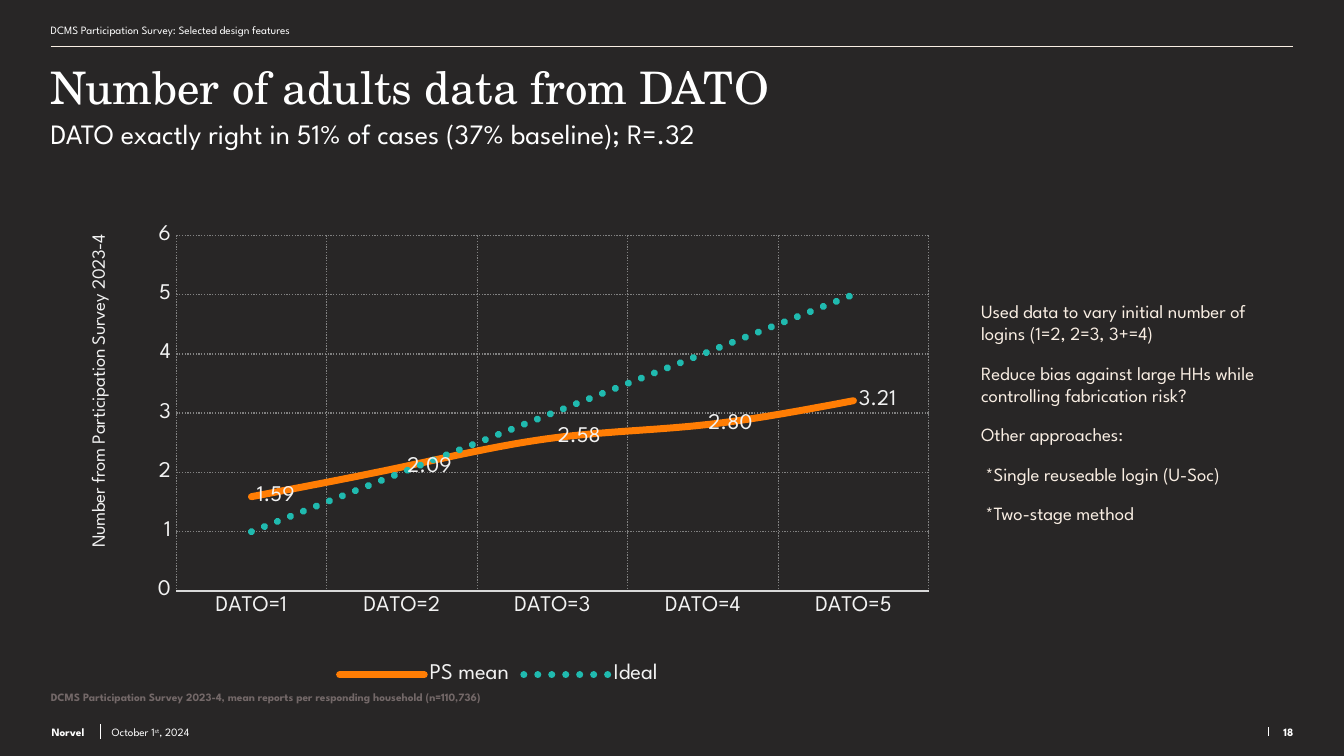
from lxml.etree import SubElement
from pptx import Presentation
from pptx.chart.data import CategoryChartData
from pptx.dml.color import RGBColor
from pptx.enum.chart import (XL_CHART_TYPE, XL_LABEL_POSITION,
                             XL_LEGEND_POSITION, XL_TICK_MARK)
from pptx.enum.dml import MSO_LINE
from pptx.enum.shapes import MSO_CONNECTOR
from pptx.enum.text import MSO_ANCHOR, PP_ALIGN
from pptx.oxml.ns import qn
from pptx.util import Pt

SANS, SERIF = "League Spartan", "TeX Gyre Schola"
WHITE, CREAM, PALE, GREY = "FFFFFF", "F9EEE3", "F2F2F2", "736868"
LEFT, RIGHT = 27.2, 692.8
NOTES = (
    "Used data to vary initial number of logins (1=2, 2=3, 3+=4)",
    "Reduce bias against large HHs while controlling fabrication risk?",
    "Other approaches:",
    " *Single reuseable login (U-Soc)",
    " *Two-stage method",
)
SERIES = (
    ("PS mean", (1.59, 2.09, 2.58, 2.80, 3.21), "FF7D04", MSO_LINE.SOLID),
    ("Ideal", (1, 2, 3, 4, 5), "20BAAF", MSO_LINE.ROUND_DOT),
)


def color(code):
    """Turn a hex string into a colour."""
    return RGBColor.from_string(code)


def assign(item, **values):
    """Set each named value on an item."""
    for name, value in values.items():
        setattr(item, name, value)


def style(font, size, code=WHITE, face=SANS, bold=False):
    """Give a font its size, face, weight and colour."""
    assign(font, size=Pt(size), name=face, bold=bold)
    font.color.rgb = color(code)


def stroke(line, code, width, dash=MSO_LINE.SOLID):
    """Give a line its colour, width and dash."""
    line.color.rgb = color(code)
    assign(line, width=Pt(width), dash_style=dash)


def rule(slide, x1, y1, x2, y2, code=WHITE):
    """Draw a thin straight line without a shadow."""
    line = slide.shapes.add_connector(
        MSO_CONNECTOR.STRAIGHT, Pt(x1), Pt(y1), Pt(x2), Pt(y2))
    stroke(line.line, code, 0.5)
    SubElement(line._element.spPr, qn("a:effectLst"))


def text(slide, box, paras, look, anchor=MSO_ANCHOR.TOP,
         align=PP_ALIGN.LEFT, after=0):
    """Add a text box; carets enclose superscript words."""
    frame = slide.shapes.add_textbox(*map(Pt, box)).text_frame
    assign(frame, word_wrap=True, vertical_anchor=anchor, margin_left=0,
           margin_right=0, margin_top=0, margin_bottom=0)
    for i, words in enumerate(paras):
        para = frame.add_paragraph() if i else frame.paragraphs[0]
        assign(para, alignment=align, space_after=Pt(after))
        for j, part in enumerate(words.split("^")):
            run = para.add_run()
            run.text = part
            style(run.font, **look)
            if j % 2:
                run._r.get_or_add_rPr().set("baseline", "30000")


def place(layout, **values):
    """Fill a chart layout element with manual values."""
    manual = SubElement(layout, qn("c:manualLayout"))
    for name, value in values.items():
        SubElement(manual, qn(f"c:{name}")).set("val", str(value))


def axes(chart):
    """Style both axes, their grids and the value title."""
    for axis in (chart.category_axis, chart.value_axis):
        assign(axis, major_tick_mark=XL_TICK_MARK.NONE,
               minor_tick_mark=XL_TICK_MARK.NONE, has_major_gridlines=True)
        style(axis.tick_labels.font, 12, PALE)
        stroke(axis.major_gridlines.format.line, "808080", 0.75,
               MSO_LINE.ROUND_DOT)
    stroke(chart.category_axis.format.line, "D9D9D9", 0.75)
    value = chart.value_axis
    assign(value, minimum_scale=0, maximum_scale=6, major_unit=1)
    assign(value.tick_labels, number_format="0",
           number_format_is_linked=False)
    value.format.line.fill.background()
    title = value.axis_title
    title.text_frame.text = "Number from Participation Survey 2023-4"
    style(title.text_frame.paragraphs[0].runs[0].font, 10, PALE)
    layout = title._element.get_or_add_layout() if hasattr(
        title._element, "get_or_add_layout") else title._element.find(
        qn("c:layout"))
    place(layout, xMode="edge", yMode="edge", x=0.04, y=0.03)


def graph(slide):
    """Add the line chart of survey means against the ideal."""
    data = CategoryChartData(number_format="0.00")
    data.categories = [f"DATO={n}" for n in range(1, 6)]
    for name, values, *_ in SERIES:
        data.add_series(name, values)
    chart = slide.shapes.add_chart(
        XL_CHART_TYPE.LINE, Pt(LEFT), Pt(116), Pt(480), Pt(254),
        data).chart
    assign(chart, has_title=False, has_legend=True)
    style(chart.font, 10, PALE)
    axes(chart)
    assign(chart.legend, position=XL_LEGEND_POSITION.BOTTOM,
           include_in_layout=False)
    style(chart.legend.font, 12, PALE)
    plot = chart.plots[0]
    plot.vary_by_categories = False
    for series, (_, _, code, dash) in zip(plot.series, SERIES):
        series.smooth = True
        stroke(series.format.line, code, 3.75, dash)
        series._element.xpath("./c:spPr/a:ln")[0].set("cap", "rnd")
    labels = plot.series[0].data_labels
    assign(labels, show_value=True, number_format="0.00",
           number_format_is_linked=False, position=XL_LABEL_POSITION.RIGHT)
    style(labels.font, 12, PALE)
    area = chart._chartSpace.chart.plotArea
    layout = area.find(qn("c:layout"))
    if layout is None:
        layout = SubElement(area, qn("c:layout"))
        area.insert(0, layout)
    place(layout, layoutTarget="inner", xMode="edge", yMode="edge",
          x=0.14, y=0.04, w=0.84, h=0.75)


def main():
    """Build and save the slide."""
    deck = Presentation()
    assign(deck, slide_width=Pt(720), slide_height=Pt(405))
    slide = deck.slides.add_slide(deck.slide_layouts[6])
    fill = slide.background.fill
    fill.solid()
    fill.fore_color.rgb = color("282626")
    small, strong = dict(size=6), dict(size=6, bold=True)
    low, mid = MSO_ANCHOR.BOTTOM, MSO_ANCHOR.MIDDLE

    rule(slide, LEFT, 24.8, RIGHT, 24.8, CREAM)
    rule(slide, 679.6, 389.5, 679.6, 394.5)
    rule(slide, 53.8, 388, 53.8, 396)
    text(slide, (LEFT, 10, 665, 12),
         ["DCMS Participation Survey: Selected design features"], small, mid)
    text(slide, (LEFT, 32, 665, 31), ["Number of adults data from DATO"],
         dict(size=24, face=SERIF))
    text(slide, (LEFT, 62.6, 582, 25),
         ["DATO exactly right in 51% of cases (37% baseline); R=.32"],
         dict(size=15))
    graph(slide)
    text(slide, (525.6, 153.4, 165.6, 134.6), NOTES,
         dict(size=10, code=CREAM), mid, after=9)
    text(slide, (LEFT, 370, 439, 8),
         ["DCMS Participation Survey 2023-4, mean reports per responding "
          "household (n=110,736)"], dict(strong, code=GREY))
    text(slide, (27.6, 386.6, 26, 9.4), ["Norvel"], strong, low)
    text(slide, (59.8, 386.6, 421, 9.4), ["October 1^st^, 2024"], small, low)
    text(slide, (679.8, 386.6, 13, 9.4), ["18"], strong, low,
         PP_ALIGN.RIGHT)
    deck.save("out.pptx")


if __name__ == "__main__":
    main()
